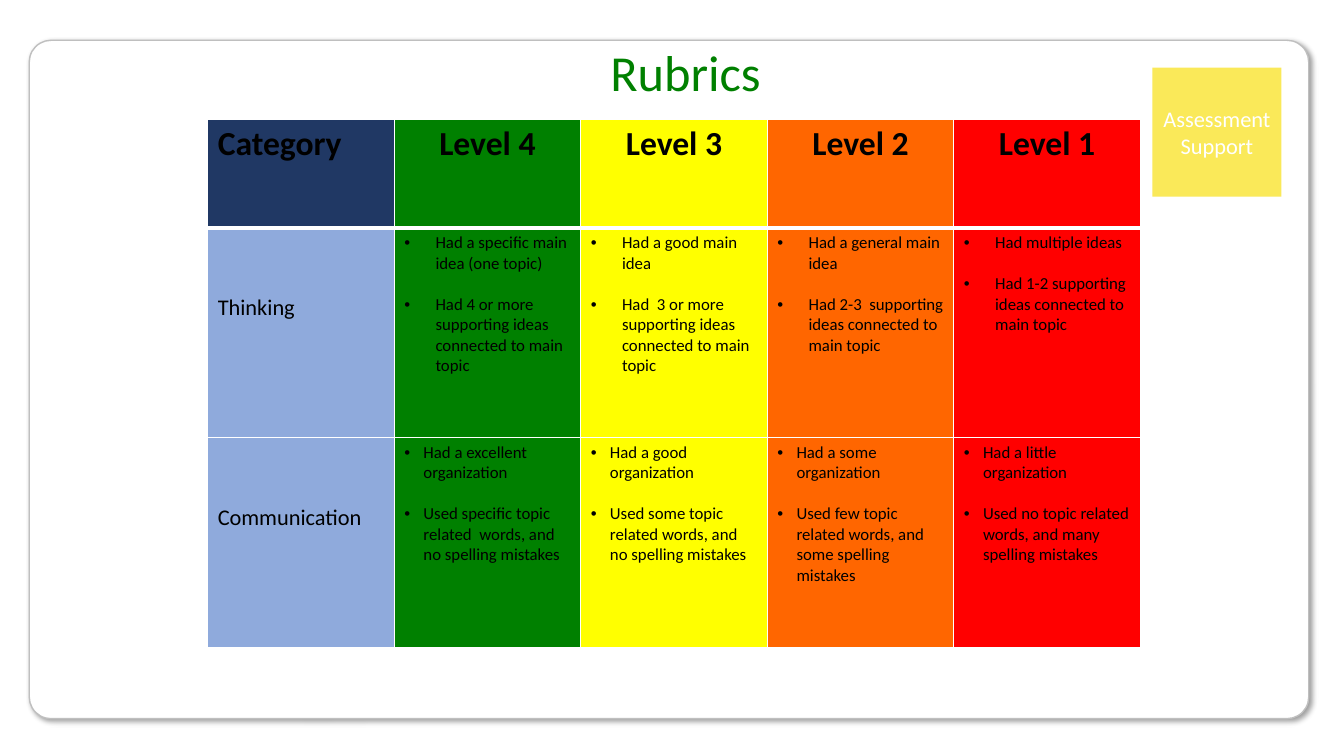
from pptx import Presentation
from pptx.dml.color import RGBColor
from pptx.enum.shapes import MSO_SHAPE as Shape
from pptx.enum.text import MSO_ANCHOR as Anchor, PP_ALIGN as Align
from pptx.oxml import parse_xml
from pptx.oxml.ns import nsdecls
from pptx.util import Pt

PX = 9144  # EMU in one px, 100 px to the inch

COLORS = {
    "white": "FFFFFF", "black": "000000", "frame": "BFBFBF", "badge": "FAE959",
    "navy": "203864", "sky": "8FAADC", "green": "008000", "yellow": "FFFF00",
    "orange": "FF6600", "red": "FF0000",
}
LEVELS = {"Level 4": "green", "Level 3": "yellow", "Level 2": "orange", "Level 1": "red"}
CRITERIA = {
    "Thinking": (31, [
        ("Had a specific main idea (one topic)",
         "Had 4 or more supporting ideas connected to main topic"),
        ("Had a good main idea",
         "Had  3 or more supporting ideas connected to main topic"),
        ("Had a general main idea",
         "Had 2-3  supporting ideas connected to main topic"),
        ("Had multiple ideas",
         "Had 1-2 supporting ideas connected to main topic"),
    ]),
    "Communication": (19, [
        ("Had a excellent organization",
         "Used specific topic related  words, and no spelling mistakes"),
        ("Had a good organization",
         "Used some topic related words, and no spelling mistakes"),
        ("Had a some organization",
         "Used few topic related words, and some spelling mistakes"),
        ("Had a little organization",
         "Used no topic related words, and many spelling mistakes"),
    ]),
}


def px(*lengths):
    return [length * PX for length in lengths]


def rgb(name):
    return RGBColor.from_string(COLORS[name])


class RubricSlide:
    font = "Calibri"

    def __init__(self, deck):
        self.page = deck.slides.add_slide(deck.slide_layouts[5])

    def text(self, para, text, size, color="black", bold=False, align=Align.LEFT):
        para.alignment = align
        span = para.add_run()
        span.text = text
        for name, value in {"name": self.font, "size": Pt(size), "bold": bold}.items():
            setattr(span.font, name, value)
        span.font.color.rgb = rgb(color)

    def box(self, kind, place, fill, line=None):
        box = self.page.shapes.add_shape(kind, *px(*place))
        box.shadow.inherit = False
        box.fill.solid()
        box.fill.fore_color.rgb = rgb(fill)
        if line:
            box.line.color.rgb = rgb(line)
            box.line.width = Pt(1)
        else:
            box.line.fill.background()
        return box

    def card(self, place):
        card = self.box(Shape.ROUNDED_RECTANGLE, place, "white", "frame")
        card.adjustments[0] = 0.032
        effects = card.element.spPr.find(".//{*}effectLst")
        effects.append(parse_xml(
            f'<a:outerShdw {nsdecls("a")} blurRad="{Pt(4)}" dist="{Pt(3)}" dir="2700000" '
            f'algn="tl" rotWithShape="0"><a:srgbClr val="{COLORS["black"]}">'
            '<a:alpha val="40000"/></a:srgbClr></a:outerShdw>'))

    def badge(self, place, text):
        frame = self.box(Shape.RECTANGLE, place, "badge").text_frame
        frame.word_wrap = True
        frame.vertical_anchor = Anchor.MIDDLE
        self.text(frame.paragraphs[0], text, 16, "white", align=Align.CENTER)

    def title(self, place, text):
        """Fill the title placeholder and bring it in front of the card."""
        title = self.page.shapes.title
        for name, value in zip(("left", "top", "width", "height"), px(*place)):
            setattr(title, name, value)
        title.text_frame.word_wrap = True
        title.text_frame.vertical_anchor = Anchor.TOP
        self.text(title.text_frame.paragraphs[0], text, 36, "green", align=Align.CENTER)
        title.element.getparent().append(title.element)

    def cell(self, cell, fill, top=1, bottom=1):
        """Set the fill and the white borders, with top and bottom widths in points."""
        cell.fill.solid()
        cell.fill.fore_color.rgb = rgb(fill)
        sides = {"L": 1, "R": 1, "T": top, "B": bottom}
        for index, (side, width) in enumerate(sides.items()):
            cell._tc.tcPr.insert(index, parse_xml(
                f'<a:ln{side} {nsdecls("a")} w="{Pt(width)}"><a:solidFill>'
                f'<a:srgbClr val="{COLORS["white"]}"/></a:solidFill></a:ln{side}>'))
        return cell

    def bullets(self, frame, texts, indent):
        for index, text in enumerate(texts):
            para = frame.add_paragraph() if index else frame.paragraphs[0]
            if index:
                para.space_before = Pt(14.6)
            props = para._p.get_or_add_pPr()
            props.set("marL", str(indent * PX))
            props.set("indent", str(-indent * PX))
            props.append(parse_xml(f'<a:buFont {nsdecls("a")} typeface="Arial"/>'))
            props.append(parse_xml(f'<a:buChar {nsdecls("a")} char="•"/>'))
            self.text(para, text, 12)

    def rubric(self, left, top, column, heights):
        columns = len(LEVELS) + 1
        grid = self.page.shapes.add_table(
            len(heights), columns, *px(left, top, column * columns, sum(heights))).table
        for grid_column in grid.columns:
            grid_column.width = column * PX
        for row, height in zip(grid.rows, heights):
            row.height = height * PX

        heads = {"Category": "navy", **LEVELS}
        for index, (text, color) in enumerate(heads.items()):
            head = self.cell(grid.cell(0, index), color, bottom=3)
            self.text(head.text_frame.paragraphs[0], text, 24, bold=True,
                      align=Align.CENTER if index else Align.LEFT)

        for row, (name, (indent, entries)) in enumerate(CRITERIA.items(), 1):
            rule = 3 if row == 1 else 1
            label = self.cell(grid.cell(row, 0), "sky", top=rule)
            label.margin_top = 66 * PX
            self.text(label.text_frame.paragraphs[0], name, 16)
            for index, (color, texts) in enumerate(zip(LEVELS.values(), entries), 1):
                entry = self.cell(grid.cell(row, index), color, top=rule)
                self.bullets(entry.text_frame, texts, indent)


def main():
    deck = Presentation()
    deck.slide_width, deck.slide_height = px(1333, 750)
    slide = RubricSlide(deck)
    slide.card((29, 40, 1269, 673))
    slide.badge((1143, 67, 128, 128), "Assessment Support")
    slide.rubric(206, 118, 185, (108, 208, 208))
    slide.title((253, 36, 854, 71), "Rubrics")
    deck.save("out.pptx")


if __name__ == "__main__":
    main()
